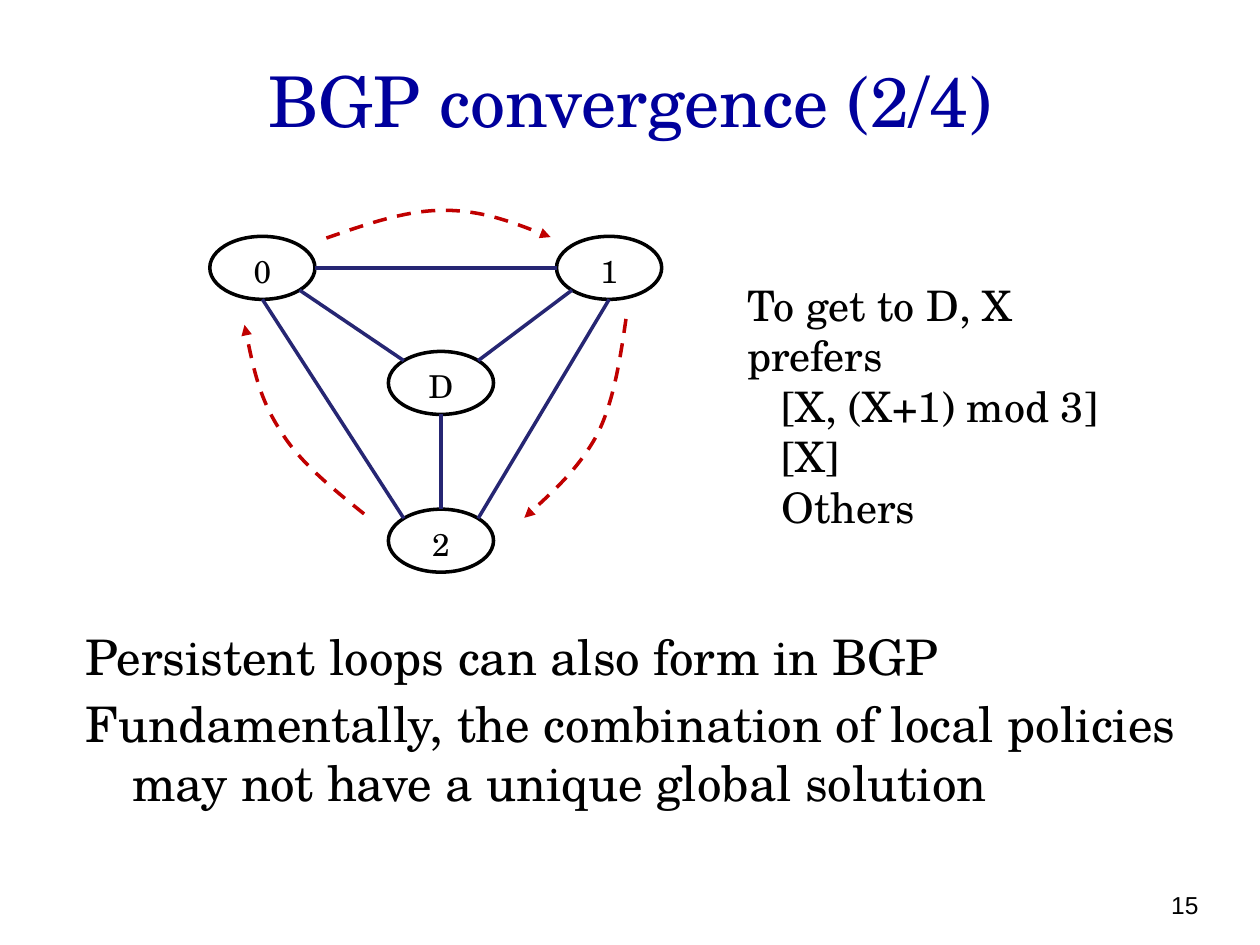
import math
import pptx
import pptx.util
import pptx.dml.color
import pptx.enum.dml
import pptx.enum.shapes
import pptx.enum.text
import pptx.oxml.ns
import pptx.oxml.xmlchemy

Cm, Pt = pptx.util.Cm, pptx.util.Pt
RGBColor = pptx.dml.color.RGBColor
Align = pptx.enum.text.PP_ALIGN
Anchor = pptx.enum.text.MSO_ANCHOR
qn = pptx.oxml.ns.qn
OxmlElement = pptx.oxml.xmlchemy.OxmlElement

SERIF, SANS = "TeX Gyre Schola", "Arial"
BLACK = RGBColor(0x00, 0x00, 0x00)
TITLE_BLUE = RGBColor(0x00, 0x00, 0x9C)
LINK_BLUE = RGBColor(0x26, 0x26, 0x73)
ARROW_RED = RGBColor(0xC0, 0x00, 0x00)

# Content
TITLE = "BGP convergence (2/4)"
PREFERENCES = ["To get to D, X prefers", "[X, (X+1) mod 3]", "[X]", "Others"]
CONCLUSIONS = [
    "Persistent loops can also form in BGP",
    "Fundamentally, the combination of local policies may not have a unique global solution",
]
PAGE = "15"

# Network: node centres in cm; links as (node, angle, node, angle),
# the angle in degrees clockwise from the right of the ellipse
NODE_W, NODE_H = 2.12, 1.27
NODES = {"0": (5.29, 5.4), "1": (12.28, 5.4), "2": (8.89, 10.9), "D": (8.89, 7.72)}
LINKS = [
    ("0", 45, "D", 225),
    ("1", 135, "D", 315),
    ("2", 270, "D", 90),
    ("0", 90, "2", 225),
    ("1", 90, "2", 315),
    ("0", 0, "1", 180),
]
# Preference arrows: start, then control, control, end for each curve
ARROWS = [
    [(6.58, 4.8), (7.39, 4.52), (8.18, 4.24), (8.94, 4.24),
     (9.7, 4.24), (10.39, 4.5), (11.1, 4.78)],
    [(12.62, 6.43), (12.5, 7.26), (12.37, 8.1), (12.04, 8.76),
     (11.68, 9.42), (11.13, 9.93), (10.57, 10.44)],
    [(7.34, 10.36), (6.68, 9.83), (6.02, 9.3), (5.64, 8.66),
     (5.23, 8.03), (5.08, 7.29), (4.93, 6.55)],
]


def write(tf, lines, size=18, font=SERIF, color=BLACK, align=Align.LEFT,
          anchor=Anchor.TOP, before=0, left=0, first=0):
    tf.word_wrap = True
    tf.vertical_anchor = anchor
    for i, text in enumerate(lines):
        p = tf.add_paragraph() if i else tf.paragraphs[0]
        p.alignment = align
        p.space_before = Pt(before if i else 0)
        if left:
            pPr = p._p.get_or_add_pPr()
            pPr.set("marL", str(int(Cm(left))))
            pPr.set("indent", str(int(Cm(first))))
        r = p.add_run()
        r.text = text
        r.font.size, r.font.name = Pt(size), font
        r.font.color.rgb = color


def add_text(slide, box, lines, **fmt):
    tf = slide.shapes.add_textbox(*map(Cm, box)).text_frame
    write(tf, lines, **fmt)
    return tf


def set_line(sp, color):
    sp.line.color.rgb = color
    sp.line.width = Pt(2)


def add_node(slide, name):
    x, y = NODES[name]
    sp = slide.shapes.add_shape(
        pptx.enum.shapes.MSO_SHAPE.OVAL,
        Cm(x - NODE_W / 2), Cm(y - NODE_H / 2), Cm(NODE_W), Cm(NODE_H))
    sp.shadow.inherit = False
    sp.fill.background()
    set_line(sp, BLACK)
    write(sp.text_frame, [name], align=Align.CENTER)


def rim(name, angle):
    x, y = NODES[name]
    a = math.radians(angle)
    return Cm(x + NODE_W / 2 * math.cos(a)), Cm(y + NODE_H / 2 * math.sin(a))


def add_link(slide, a, angle_a, b, angle_b):
    line = slide.shapes.add_connector(
        pptx.enum.shapes.MSO_CONNECTOR.STRAIGHT, *rim(a, angle_a), *rim(b, angle_b))
    set_line(line, LINK_BLUE)
    line.element.spPr.append(OxmlElement("a:effectLst"))


def add_arrow(slide, points):
    start, *rest = [(Cm(x), Cm(y)) for x, y in points]
    builder = slide.shapes.build_freeform(*start)
    builder.add_line_segments(rest, close=False)
    sp = builder.convert_to_shape()
    # Turn each three line segments into one Bezier curve
    segments = list(sp.element.iter(qn("a:lnTo")))
    for i in range(0, len(segments), 3):
        curve = OxmlElement("a:cubicBezTo")
        segments[i].addprevious(curve)
        for segment in segments[i:i + 3]:
            curve.append(segment[0])
            segment.getparent().remove(segment)
    sp.shadow.inherit = False
    sp.fill.background()
    set_line(sp, ARROW_RED)
    sp.line.dash_style = pptx.enum.dml.MSO_LINE.DASH
    tail = OxmlElement("a:tailEnd")
    tail.set("type", "triangle")
    sp.element.spPr.find(qn("a:ln")).append(tail)


def main():
    prs = pptx.Presentation()
    prs.slide_width, prs.slide_height = Cm(25.4), Cm(19.05)
    slide = prs.slides.add_slide(prs.slide_layouts[6])

    # Title, conclusions and page number
    add_text(slide, (1.27, 0.81, 22.86, 2.41), [TITLE], size=40, color=TITLE_BLUE,
             align=Align.CENTER, anchor=Anchor.MIDDLE)
    add_text(slide, (1.47, 12.5, 22.66, 5.08), CONCLUSIONS, size=28,
             before=5, left=0.95, first=-0.95)
    add_text(slide, (18.49, 17.35, 5.92, 1.32), [PAGE], size=14, font=SANS,
             align=Align.RIGHT, anchor=Anchor.BOTTOM)

    # Preference list, indented below its lead line
    tf = add_text(slide, (14.81, 5.51, 8.69, 4.37), PREFERENCES, size=24,
                  left=0.7)
    tf.auto_size = pptx.enum.text.MSO_AUTO_SIZE.SHAPE_TO_FIT_TEXT
    tf.paragraphs[0]._p.get_or_add_pPr().set("marL", "0")

    # Network
    for name in NODES:
        add_node(slide, name)
    for link in LINKS:
        add_link(slide, *link)
    for points in ARROWS:
        add_arrow(slide, points)

    prs.save("out.pptx")


if __name__ == "__main__":
    main()
